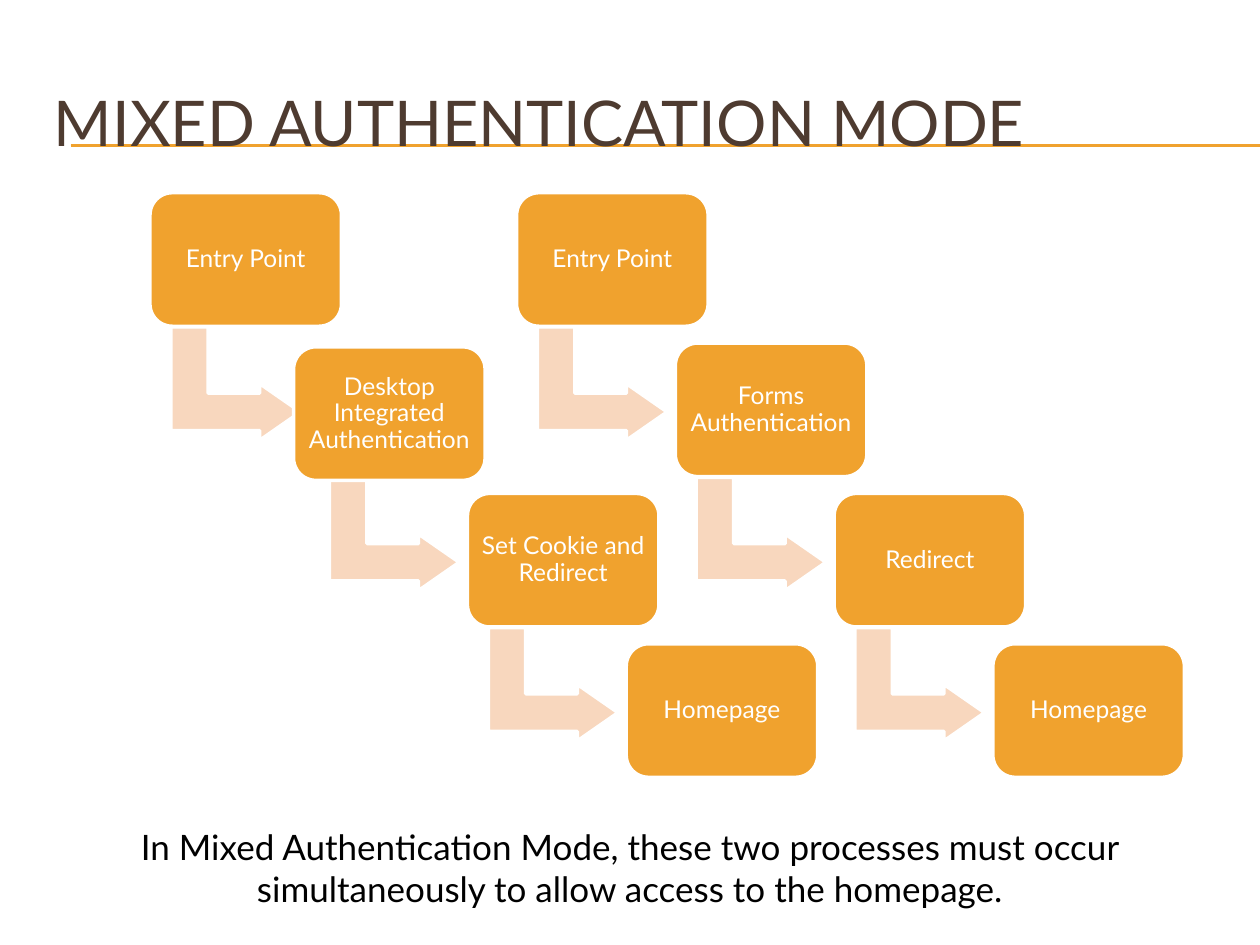
"""Build the mixed authentication mode slide with two stepped flows."""
from lxml import etree
from pptx import Presentation
from pptx.dml.color import RGBColor
from pptx.enum.shapes import MSO_CONNECTOR, MSO_SHAPE
from pptx.enum.text import MSO_ANCHOR, PP_ALIGN
from pptx.oxml.ns import qn
from pptx.util import Inches, Pt

LINE = MSO_CONNECTOR.STRAIGHT
BOX, BEND = MSO_SHAPE.ROUNDED_RECTANGLE, MSO_SHAPE.BENT_UP_ARROW
TOP, MIDDLE = MSO_ANCHOR.TOP, MSO_ANCHOR.MIDDLE
LEFT, CENTER = PP_ALIGN.LEFT, PP_ALIGN.CENTER

TITLE = "MIXED AUTHENTICATION MODE"
NOTE = ("In Mixed Authentication Mode, these two processes must occur "
        "simultaneously to allow access to the homepage.")
FLOWS = [
    ["Entry Point", "Desktop Integrated Authentication",
     "Set Cookie and Redirect", "Homepage"],
    ["Entry Point", "Forms Authentication", "Redirect", "Homepage"],
]
NUDGE = {(0, 1): (-0.12, 0.03)}
FONT = "Lato"
GOLD, PEACH, BROWN, WHITE, BLACK = "F0A22E", "F8D7BE", "4E3B30", "FFFFFF", "000000"
WIDE, HIGH = 10, 7.5
X0, Y0, GAP = 1.19, 1.53, 2.91
COL, ROW = 1.26, 3.58 / 3
BOX_W, BOX_H = 1.52, 1.06
BEND_W, BEND_H, BEND_X, BEND_Y = 0.9, 1.03, 0.23, 1


def color(code):
    return RGBColor.from_string(code)


def write(shape, text, size=14, ink=WHITE, align=CENTER, anchor=MIDDLE,
          pad=None, space=None):
    frame = shape.text_frame
    frame.word_wrap = True
    frame.vertical_anchor = anchor
    if pad is not None:
        frame.margin_left = frame.margin_right = Inches(pad)
        frame.margin_top = frame.margin_bottom = Inches(pad)
    para = frame.paragraphs[0]
    para.alignment, para.line_spacing = align, space
    run = para.add_run()
    run.text = text
    run.font.name, run.font.size = FONT, Pt(size)
    run.font.color.rgb = color(ink)


def label(slide, area, text, **style):
    write(slide.shapes.add_textbox(*map(Inches, area)), text, **style)


def draw(slide, kind, area, fill, adjust):
    shape = slide.shapes.add_shape(kind, *map(Inches, area))
    shape.shadow.inherit = False
    shape.fill.solid()
    shape.fill.fore_color.rgb = color(fill)
    shape.line.color.rgb = color(WHITE)
    shape.line.width = Pt(2)
    for i, value in enumerate(adjust):
        shape.adjustments[i] = value
    return shape


def rule(slide, y):
    line = slide.shapes.add_connector(
        LINE, Inches(0.56), Inches(y), Inches(WIDE), Inches(y))
    line.line.color.rgb = color(GOLD)
    line.line.width = Pt(0.75)
    etree.SubElement(line._element.spPr, qn("a:effectLst"))


def flow(slide, index, steps):
    for i, text in enumerate(steps):
        x, y = X0 + index * GAP + i * COL, Y0 + i * ROW
        if i < len(steps) - 1:
            area = (x + BEND_X, y + BEND_Y, BEND_W, BEND_H)
            draw(slide, BEND, area, PEACH, (0.33, 0.25, 0.36)).rotation = 90
        dx, dy = NUDGE.get((index, i), (0, 0))
        box = draw(slide, BOX, (x + dx, y + dy, BOX_W, BOX_H), GOLD, (0.167,))
        write(box, text, pad=0.06, space=0.9)


def main():
    deck = Presentation()
    deck.slide_width, deck.slide_height = Inches(WIDE), Inches(HIGH)
    slide = deck.slides.add_slide(deck.slide_layouts[6])
    for y in (1.15, 1.16):
        rule(slide, y)
    label(slide, (0.33, 0.5, 9.5, 0.92), TITLE, size=36, ink=BROWN, align=LEFT)
    for index, steps in enumerate(FLOWS):
        flow(slide, index, steps)
    label(slide, (0.25, 6.5, 9.5, 0.77), NOTE, size=20, ink=BLACK, anchor=TOP)
    deck.save("out.pptx")


if __name__ == "__main__":
    main()
